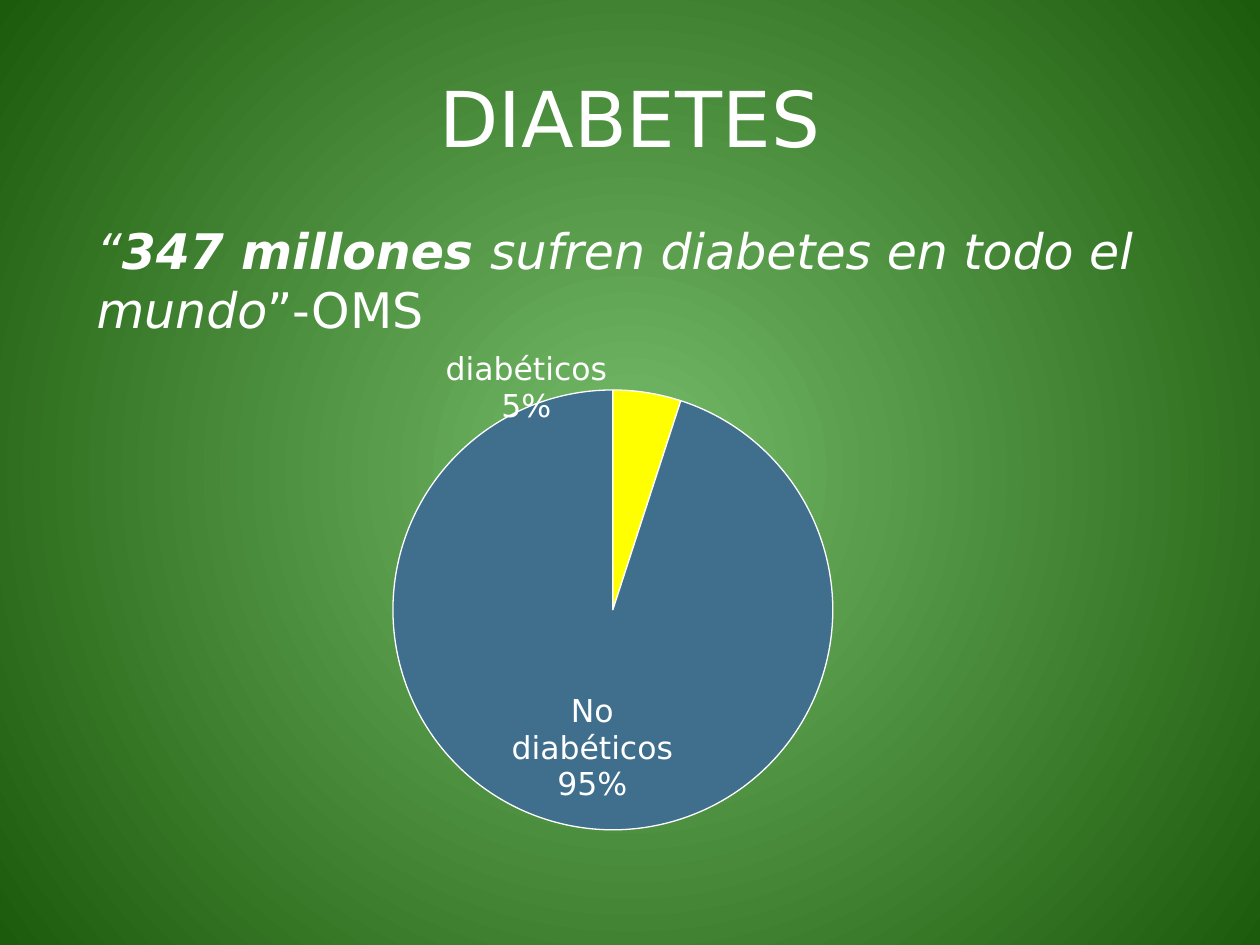
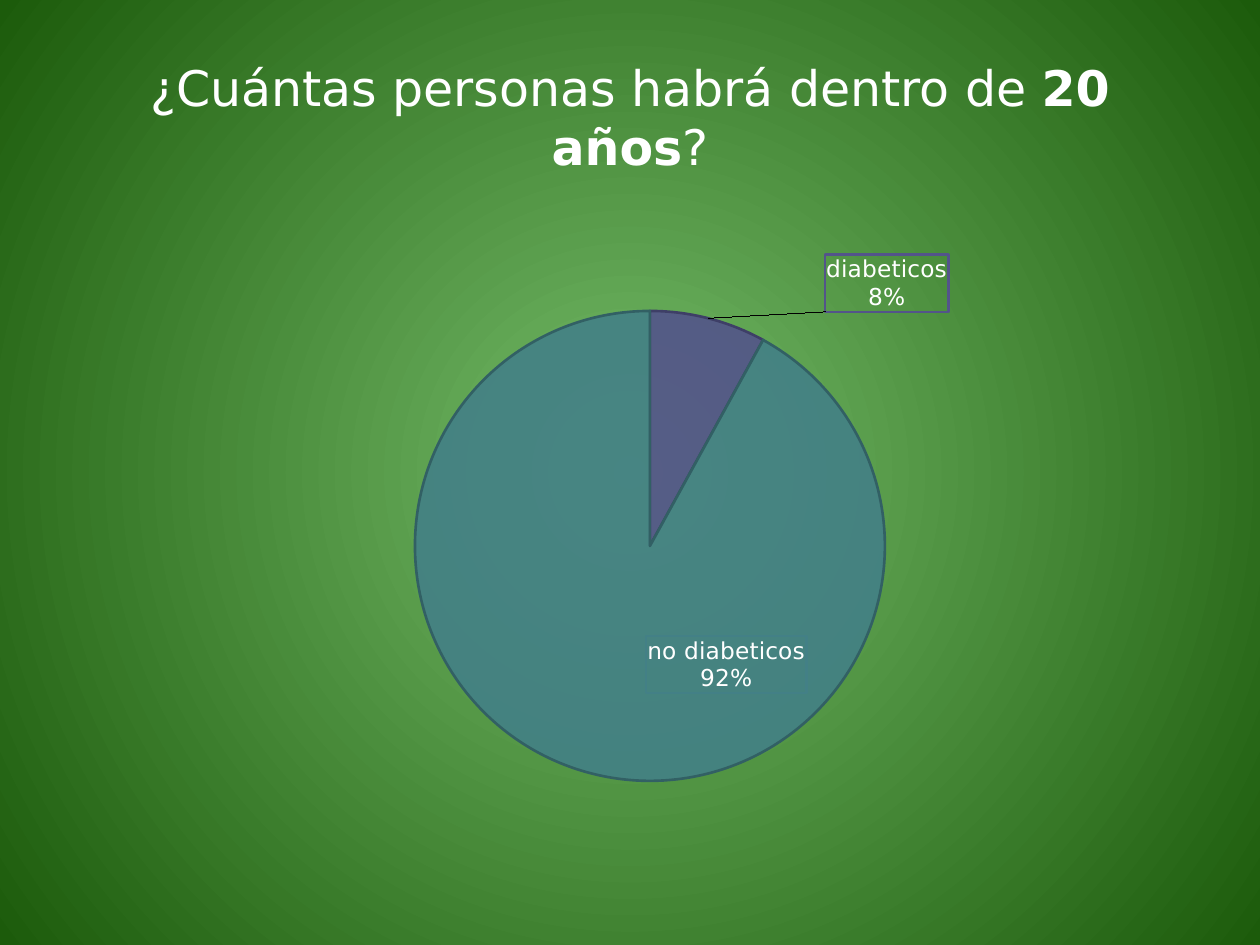
from lxml import etree
from pptx import Presentation
from pptx.chart.data import CategoryChartData
from pptx.dml.color import RGBColor
from pptx.enum.chart import XL_CHART_TYPE, XL_LABEL_POSITION
from pptx.enum.text import MSO_ANCHOR, PP_ALIGN
from pptx.oxml import parse_xml
from pptx.oxml.ns import nsdecls, qn
from pptx.util import Pt

PIE = XL_CHART_TYPE.PIE
INSIDE_END = XL_LABEL_POSITION.INSIDE_END
CENTER = PP_ALIGN.CENTER
MIDDLE, TOP = MSO_ANCHOR.MIDDLE, MSO_ANCHOR.TOP

PX = 914400 // 126
FONT = "DejaVu Sans"
WHITE, LIGHT_GREEN, DARK_GREEN = "FFFFFF", "75BB69", "1C5B0B"
TITLE_BOX = (63, 38, 1134, 157)
QUOTE_BOX = (84, 214, 1134, 624)

SLIDES = [
    {
        "title": [("DIABETES", "")],
        "title_size": 44,
        "quote": [
            ("“", "i"),
            ("347 millones ", "bi"),
            ("sufren diabetes en todo el mundo", "i"),
            ("”-OMS", ""),
        ],
        "chart": {
            "frame": (1, 294, 1037, 621),
            "pie": (393, 390, 440, 440),
            "label_size": 18,
            "opacity": 100,
            "outline_width": 0.75,
            "leader_lines": False,
            "slices": [
                {"category": "diabeticos", "value": 5, "fill": "FFFF00", "outline": WHITE,
                 "label": "diabéticos\n5%", "label_shift": (-39, -48)},
                {"category": "resto", "value": 95, "fill": "406F8D", "outline": WHITE,
                 "label": "No diabéticos\n95%", "label_shift": (-68, -16)},
            ],
        },
    },
    {
        "title": [("¿Cuántas personas habrá dentro de ", ""), ("20 años", "b"), ("?", "")],
        "title_size": 28,
        "chart": {
            "frame": (64, 234, 1134, 624),
            "pie": (415, 311, 470, 470),
            "label_size": 13.3,
            "opacity": 90,
            "outline_width": 1.5,
            "leader_lines": True,
            "slices": [
                {"category": "diabeticos", "value": 8, "fill": "53548A", "outline": "3E3F67",
                 "label_border": "53548A", "label_shift": (242, -71)},
                {"category": "no diabeticos", "value": 92, "fill": "438086",
                 "outline": "326064", "label_border": "438086", "label_shift": (53, -73)},
            ],
        },
    },
]


def rgb(color):
    """Turn a hex string into a colour."""
    return RGBColor.from_string(color)


def emu(box):
    """Scale a box from px to EMU."""
    return [length * PX for length in box]


def style_font(font, size):
    """Apply the shared typeface and colour."""
    font.name = FONT
    font.size = Pt(size)
    font.color.rgb = rgb(WHITE)


def paint_background(master):
    """Give every slide the radial green gradient."""
    fill = master.background.fill
    fill.gradient()
    for stop, color, position in zip(fill.gradient_stops, (LIGHT_GREEN, DARK_GREEN), (0, 1)):
        stop.color.rgb = rgb(color)
        stop.position = position
    gradient = next(master.element.iter(qn("a:gradFill")))
    gradient.replace(gradient.find(qn("a:lin")), parse_xml(
        f'<a:path {nsdecls("a")} path="circle">'
        '<a:fillToRect l="50000" t="50000" r="50000" b="50000"/></a:path>'))


def write_text(placeholder, box, spans, size, anchor):
    """Place a placeholder and fill its paragraph with styled spans."""
    placeholder.left, placeholder.top, placeholder.width, placeholder.height = emu(box)
    frame = placeholder.text_frame
    frame.word_wrap = True
    frame.vertical_anchor = anchor
    paragraph = frame.paragraphs[0]
    paragraph.space_before = Pt(0)
    for words, style in spans:
        run = paragraph.add_run()
        run.text = words
        style_font(run.font, size)
        run.font.bold = "b" in style
        run.font.italic = "i" in style
    return paragraph


def remove_bullet(paragraph):
    """Set a list paragraph flush left without a bullet."""
    properties = paragraph._p.get_or_add_pPr()
    properties.set("marL", "0")
    properties.set("indent", "0")
    etree.SubElement(properties, qn("a:buNone"))


def manual_layout(values, modes=""):
    """Build a chart layout from fractions of the frame."""
    fields = "".join(f'<c:{key} val="{value:.4f}"/>' for key, value in zip("xywh", values))
    return parse_xml(f'<c:layout {nsdecls("c")}><c:manualLayout>{modes}{fields}'
                     '</c:manualLayout></c:layout>')


def paint_slice(point, part, spec):
    """Fill and outline one slice."""
    fill, line = point.format.fill, point.format.line
    fill.solid()
    fill.fore_color.rgb = rgb(part["fill"])
    line.color.rgb = rgb(part["outline"])
    line.width = Pt(spec["outline_width"])


def add_label(point, part, size):
    """Give a slice its own text, or its category and percentage."""
    label = point.data_label
    if "label" in part:
        label.text_frame.text = part["label"]
        for paragraph in label.text_frame.paragraphs:
            for run in paragraph.runs:
                style_font(run.font, size)
    else:
        style_font(label.font, size)
    label.position = INSIDE_END


def finish_label(label, part, frame):
    """Shift a label, pick what it shows and draw its border."""
    shift = [part["label_shift"][axis] / frame[axis + 2] for axis in (0, 1)]
    for old_layout in label.findall(qn("c:layout")):
        label.remove(old_layout)
    label.find(qn("c:idx")).addnext(manual_layout(shift))
    for key, shown in (("showVal", 0), ("showCatName", 1), ("showPercent", 1)):
        label.find(qn(f"c:{key}")).set("val", str(shown))
    etree.SubElement(label, qn("c:separator")).text = "\n"
    if "label_border" in part:
        for old_border in label.findall(qn("c:spPr")):
            label.remove(old_border)
        label.find(qn("c:txPr")).addprevious(parse_xml(
            f'<c:spPr {nsdecls("c", "a")}><a:noFill/><a:ln w="{Pt(1.25)}"><a:solidFill>'
            f'<a:srgbClr val="{part["label_border"]}"/></a:solidFill></a:ln></c:spPr>'))


def add_pie(slide, spec):
    """Draw a pie chart with placed labels."""
    frame, pie, slices = spec["frame"], spec["pie"], spec["slices"]
    data = CategoryChartData()
    data.categories = [part["category"] for part in slices]
    data.add_series("Series 1", [part["value"] for part in slices])
    chart = slide.shapes.add_chart(PIE, *emu(frame), data).chart
    chart.has_legend = False
    chart.has_title = False
    style_font(chart.font, spec["label_size"])
    plot = chart.plots[0]
    plot.vary_by_categories = True
    series = plot.series[0]
    labels = series.data_labels
    style_font(labels.font, spec["label_size"])
    labels.show_value = False
    labels.show_category_name = True
    labels.show_percentage = True
    labels.position = INSIDE_END

    for index, part in enumerate(slices):
        point = series.points[index]
        paint_slice(point, part, spec)
        add_label(point, part, spec["label_size"])
    for label, part in zip(chart.element.iter(qn("c:dLbl")), slices):
        finish_label(label, part, frame)
    for leader in chart.element.iter(qn("c:showLeaderLines")):
        leader.set("val", str(int(spec["leader_lines"])))
    if spec["opacity"] < 100:
        for point in chart.element.iter(qn("c:dPt")):
            color = point.find(qn("c:spPr")).find(qn("a:solidFill"))[0]
            etree.SubElement(color, qn("a:alpha")).set("val", str(spec["opacity"] * 1000))

    plot_area = next(chart.element.iter(qn("c:plotArea")))
    for old_layout in plot_area.findall(qn("c:layout")):
        plot_area.remove(old_layout)
    fractions = [(pie[0] - frame[0]) / frame[2], (pie[1] - frame[1]) / frame[3],
                 pie[2] / frame[2], pie[3] / frame[3]]
    modes = '<c:layoutTarget val="inner"/><c:xMode val="edge"/><c:yMode val="edge"/>'
    plot_area.insert(0, manual_layout(fractions, modes))


def main():
    """Build and save the slides."""
    deck = Presentation()
    deck.slide_width, deck.slide_height = emu((1260, 945))
    paint_background(deck.slide_master)
    title_and_content, title_only = deck.slide_layouts[1], deck.slide_layouts[5]
    for content in SLIDES:
        slide = deck.slides.add_slide(title_and_content if "quote" in content else title_only)
        title = write_text(slide.shapes.title, TITLE_BOX, content["title"],
                           content["title_size"], MIDDLE)
        title.alignment = CENTER
        if "quote" in content:
            quote = write_text(slide.placeholders[1], QUOTE_BOX, content["quote"], 28, TOP)
            remove_bullet(quote)
        add_pie(slide, content["chart"])
    deck.save("out.pptx")


if __name__ == "__main__":
    main()
